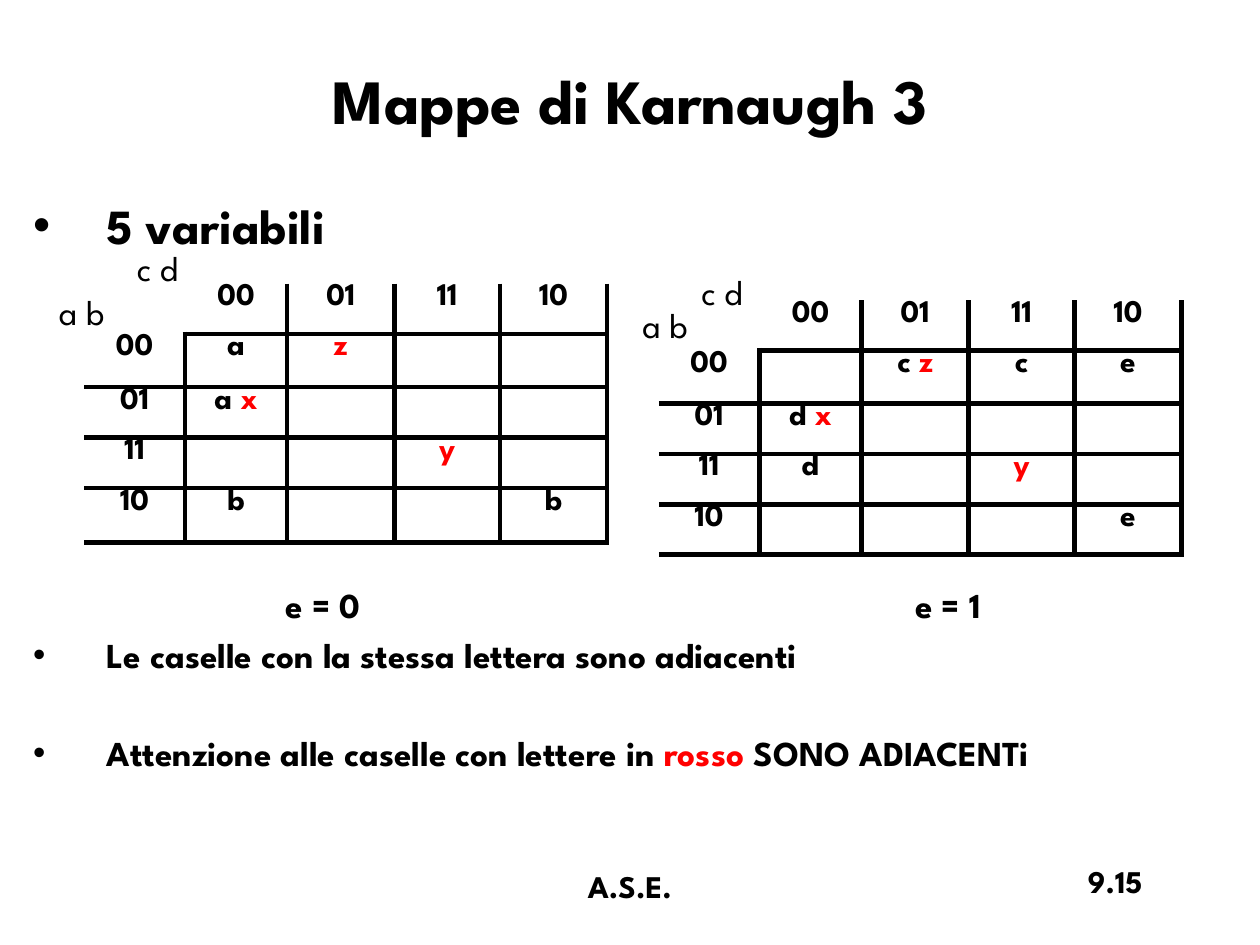
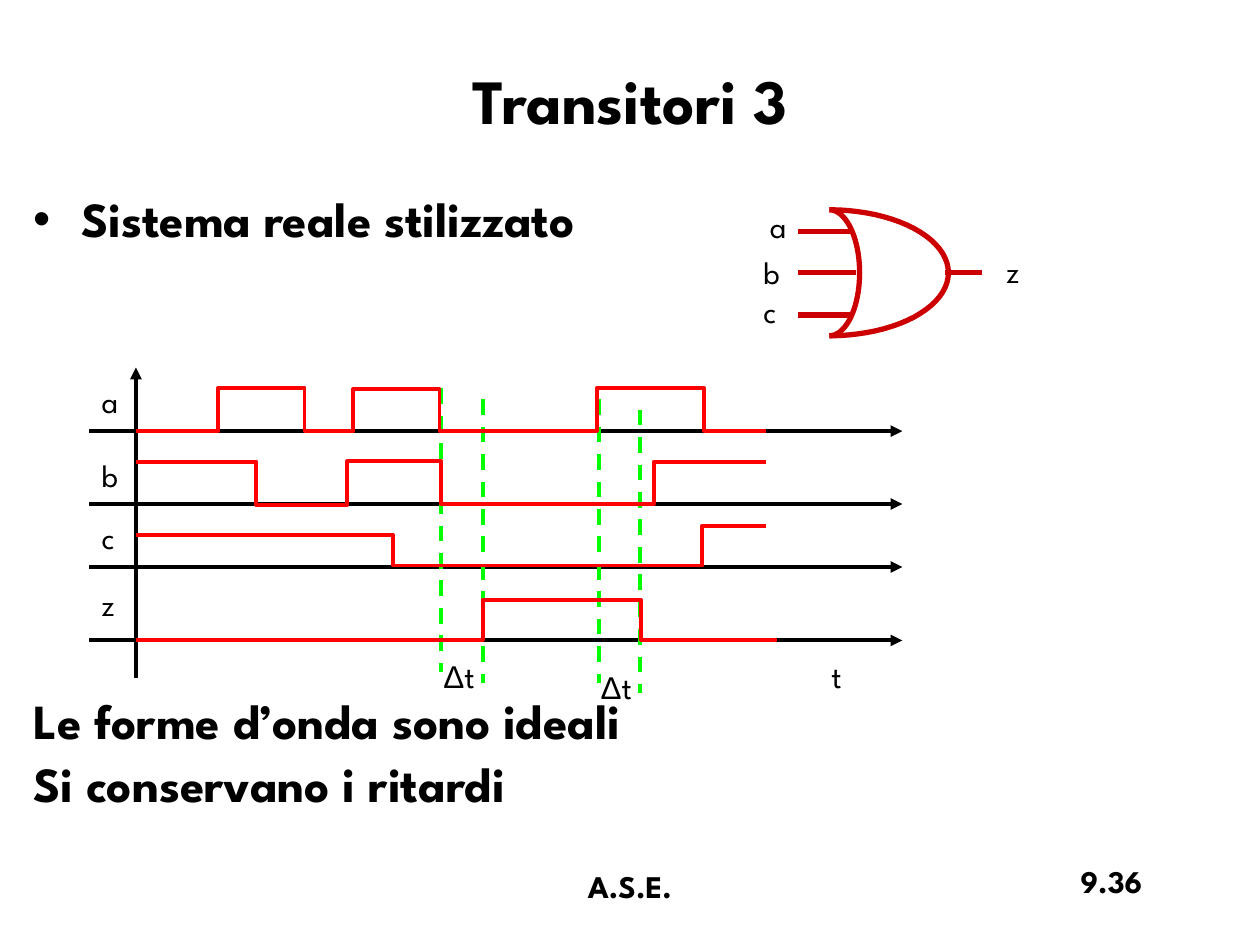
from math import cos, pi, sin

from lxml.etree import SubElement
from pptx import Presentation
from pptx.dml.color import RGBColor
from pptx.enum.dml import MSO_LINE
from pptx.enum.shapes import MSO_CONNECTOR
from pptx.enum.text import MSO_ANCHOR, PP_ALIGN as ALIGN
from pptx.oxml import parse_xml
from pptx.oxml.ns import nsdecls, qn
from pptx.util import Cm, Pt

color = RGBColor.from_string
FONT, SYMBOL_FONT = "League Spartan", "Arial"
BLACK, RED, GREEN, GATE_RED = "000000", "FF0000", "00FF00", "CC0000"


def write_text(paragraph, text, size, bold=False, align=ALIGN.LEFT):
    """Write text whose parts, split at "|", are black and red by turns."""
    paragraph.alignment = align
    for index, part in enumerate(text.split("|")):
        if not part:
            continue
        run = paragraph.add_run()
        run.text = part
        run.font.name = SYMBOL_FONT if part == "Δ" else FONT
        run.font.size = Pt(size)
        run.font.bold = bold
        run.font.color.rgb = color(RED if index % 2 else BLACK)


def style_line(shape, line_color, width, arrow=False, dashed=False):
    shape.line.color.rgb = color(line_color)
    shape.line.width = Pt(width)
    if dashed:
        shape.line.dash_style = MSO_LINE.DASH
    properties = shape._element.spPr
    if arrow:
        SubElement(properties.find(qn("a:ln")), qn("a:tailEnd"), type="triangle")
    SubElement(properties, qn("a:effectLst"))


presentation = Presentation()
presentation.slide_width, presentation.slide_height = Cm(25.4), Cm(19.05)
blank = presentation.slide_layouts[6]
karnaugh = presentation.slides.add_slide(blank)
transients = presentation.slides.add_slide(blank)

# Title, body and footer of each slide
# Body paragraphs: text, size, space before, bullet
pages = [
    (karnaugh, "Mappe di Karnaugh 3", "9.15", 1.48, 1.0, [
        ("5 variabili", 28, 5.6, True),
        ("Le caselle con la stessa lettera sono adiacenti", 20, 217, True),
        ("Attenzione alle caselle con lettere in |rosso| SONO ADIACENTi", 20, 32, True),
    ]),
    (transients, "Transitori 3", "9.36", 0.97, 0.9, [
        ("Sistema reale stilizzato", 28, 5.6, True),
        ("Le forme d’onda sono ideali", 28, 256.5, False),
        ("Si conservano i ritardi", 28, 5.6, False),
    ]),
]
for slide, title, number, indent, line_spacing, body in pages:
    for text, left, top, width, height, size, align, anchor in [
        (title, 0.42, 0.42, 24.56, 3.18, 36, ALIGN.CENTER, MSO_ANCHOR.MIDDLE),
        (number, 17.99, 17.25, 5.29, 1.27, 18, ALIGN.RIGHT, MSO_ANCHOR.TOP),
        ("A.S.E.", 8.68, 17.36, 8.04, 1.27, 18, ALIGN.CENTER, MSO_ANCHOR.TOP),
    ]:
        box = slide.shapes.add_textbox(Cm(left), Cm(top), Cm(width), Cm(height))
        box.text_frame.word_wrap = True
        box.text_frame.vertical_anchor = anchor
        write_text(box.text_frame.paragraphs[0], text, size, True, align)

    box = slide.shapes.add_textbox(Cm(0.42), Cm(3.81), Cm(24.56), Cm(13.12))
    frame = box.text_frame
    frame.word_wrap = True
    for index, (text, size, space_before, bullet) in enumerate(body):
        paragraph = frame.add_paragraph() if index else frame.paragraphs[0]
        write_text(paragraph, text, size, True)
        paragraph.space_before = Pt(space_before)
        paragraph.line_spacing = line_spacing
        properties = paragraph._p.get_or_add_pPr()
        properties.set("marL", str(Cm(indent)))
        properties.set("indent", str(-Cm(indent)))
        if bullet:
            SubElement(properties, qn("a:buFont"), typeface=SYMBOL_FONT)
            SubElement(properties, qn("a:buChar"), char="•")

# Karnaugh maps
codes = ["00", "01", "11", "10"]
column_widths = [2.03, 2.06, 2.16, 2.13, 2.16]
maps = [
    (1.7, 5.72, [1.01, 1.07, 1.02, 1.02, 1.1], [
        ["a", "|z", "", ""],
        ["a |x", "", "", ""],
        ["", "", "|y", ""],
        ["b", "", "", "b"],
    ]),
    (13.28, 6.05, [1.01, 1.07, 1.02, 1.02, 1.01], [
        ["", "c |z", "c", "e"],
        ["d |x", "", "", ""],
        ["d", "", "|y", ""],
        ["", "", "", "e"],
    ]),
]
for left, top, row_heights, values in maps:
    frame = karnaugh.shapes.add_table(
        5, 5, Cm(left), Cm(top), Cm(sum(column_widths)), Cm(sum(row_heights)))
    table = frame.table
    table.first_row = table.horz_banding = False
    for column, width in zip(table.columns, column_widths):
        column.width = Cm(width)
    for row, height in zip(table.rows, row_heights):
        row.height = Cm(height)
    grid = [["", *codes]] + [[code, *line] for code, line in zip(codes, values)]
    for r, texts in enumerate(grid):
        for c, text in enumerate(texts):
            cell = table.cell(r, c)
            cell.margin_top = cell.margin_bottom = 0
            cell.fill.background()
            write_text(cell.text_frame.paragraphs[0], text, 18, True, ALIGN.CENTER)
            # Outer top and left edges stay open, and so does the corner cell
            edges = {
                "lnL": c > 1 or (c == 1 and r > 0),
                "lnR": c > 0 or r > 0,
                "lnT": r > 1 or (r == 1 and c > 0),
                "lnB": r > 0 or c > 0,
            }
            properties = cell._tc.get_or_add_tcPr()
            for position, (edge, visible) in enumerate(edges.items()):
                fill = (f'<a:solidFill><a:srgbClr val="{BLACK}"/></a:solidFill>'
                        if visible else "<a:noFill/>")
                properties.insert(position, parse_xml(
                    f'<a:{edge} {nsdecls("a")} w="{Pt(3)}">{fill}</a:{edge}>'))

# Time axes and delay marks
for x1, y1, x2, y2 in [(2.74, 13.67, 2.74, 7.41)] + [
        (1.8, y, 18.19, y) for y in (8.69, 10.16, 11.43, 12.91)]:
    axis = transients.shapes.add_connector(
        MSO_CONNECTOR.STRAIGHT, Cm(x1), Cm(y1), Cm(x2), Cm(y2))
    style_line(axis, BLACK, 2.25, arrow=True)

for x, top in [(8.89, 7.83), (9.73, 8.05), (12.07, 8.05), (12.9, 8.26)]:
    mark = transients.shapes.add_connector(
        MSO_CONNECTOR.STRAIGHT, Cm(x), Cm(top), Cm(x), Cm(top + 5.72))
    style_line(mark, GREEN, 2.25, dashed=True)

# Waveforms: end, then each step as (time, level)
waves = [
    (15.44, [(2.74, 8.69), (4.4, 7.82), (6.14, 8.69), (7.12, 7.84),
             (8.86, 8.69), (12.03, 7.83), (14.2, 8.69)]),
    (15.44, [(2.74, 9.31), (5.17, 10.18), (7, 9.3), (8.9, 10.16), (13.18, 9.31)]),
    (15.44, [(2.74, 10.78), (7.92, 11.4), (14.16, 10.6)]),
    (15.67, [(2.74, 12.9), (9.73, 12.09), (12.92, 12.9)]),
]
for end, steps in waves:
    times = [time for time, level in steps[1:]] + [end]
    points = []
    for (start, level), stop in zip(steps, times):
        points += [(Cm(start), Cm(level)), (Cm(stop), Cm(level))]
    builder = transients.shapes.build_freeform(*points[0])
    builder.add_line_segments(points[1:], close=False)
    wave = builder.convert_to_shape()
    wave.fill.background()
    style_line(wave, RED, 2.25)

# OR gate: two half ellipses, three inputs and the output
gate = transients.shapes.add_group_shape()
gate_x, gate_y, gate_radius = 16.72, 5.5, 1.27
for depth in (2.4, 0.61):
    angles = [pi * step / 40 - pi / 2 for step in range(41)]
    points = [(Cm(gate_x + depth * cos(angle)), Cm(gate_y + gate_radius * sin(angle)))
              for angle in angles]
    builder = gate.shapes.build_freeform(*points[0])
    builder.add_line_segments(points[1:], close=False)
    curve = builder.convert_to_shape()
    curve.fill.background()
    style_line(curve, GATE_RED, 3)
for x1, x2, y in [(17.15, 16.08, 4.66), (17.25, 16.08, 5.5),
                  (17.15, 16.08, 6.35), (19.79, 19.05, 5.5)]:
    wire = gate.shapes.add_connector(
        MSO_CONNECTOR.STRAIGHT, Cm(x1), Cm(y), Cm(x2), Cm(y))
    style_line(wire, GATE_RED, 3)

# Labels: text, left, top, width
map_labels = [("c d", 2.51, 4.85, 1.55), ("a b", 0.94, 5.74, 1.55),
              ("c d", 13.89, 5.33, 1.55), ("a b", 12.7, 5.99, 1.55)]
map_captions = [("e = 0", 5.51, 11.63, 3), ("e = 1", 18.2, 11.63, 3)]
signal_labels = [
    ("a", 15.27, 4.04, 0.9), ("b", 15.14, 4.98, 0.9),
    ("c", 15.14, 5.77, 0.9), ("z", 20.04, 4.95, 0.9),
    ("a", 1.8, 7.57, 0.9), ("b", 1.8, 9.07, 0.9),
    ("c", 1.8, 10.31, 0.9), ("z", 1.8, 11.66, 0.9),
    ("t", 16.51, 13.13, 0.9), ("Δ||t", 8.69, 13.13, 1.3), ("Δ||t", 11.86, 13.34, 1.3),
]
for slide, labels, size, bold in [(karnaugh, map_labels, 20, False),
                                  (karnaugh, map_captions, 20, True),
                                  (transients, signal_labels, 18, False)]:
    for text, left, top, width in labels:
        box = slide.shapes.add_textbox(Cm(left), Cm(top), Cm(width), Cm(size * 0.055))
        box.text_frame.word_wrap = True
        write_text(box.text_frame.paragraphs[0], text, size, bold)

presentation.save("out.pptx")
